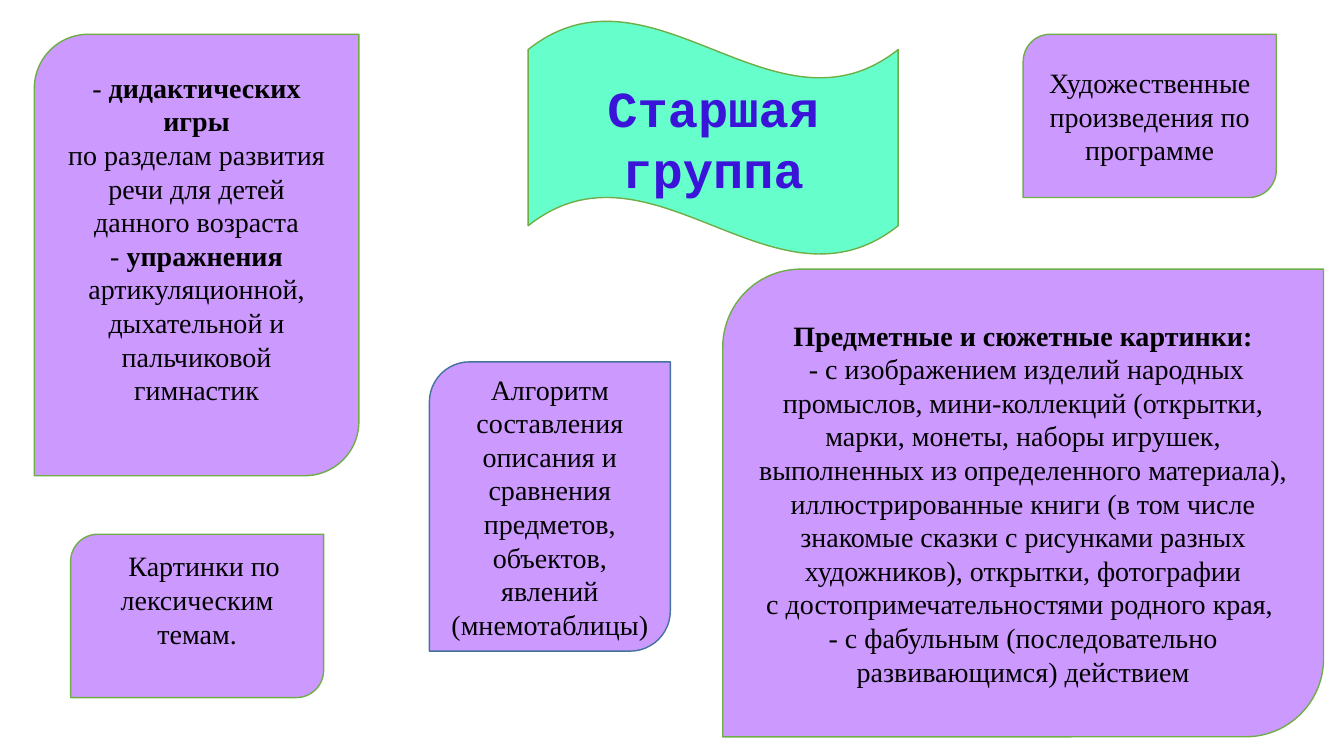
from pptx import Presentation
from pptx.dml.color import RGBColor
from pptx.enum.shapes import MSO_SHAPE
from pptx.enum.text import MSO_ANCHOR, PP_ALIGN
from pptx.util import Inches, Pt

CARD = MSO_SHAPE.ROUND_2_DIAG_RECTANGLE
WAVE = MSO_SHAPE.WAVE
MIDDLE = MSO_ANCHOR.MIDDLE
CENTER = PP_ALIGN.CENTER

LILAC = RGBColor(0xCC, 0x99, 0xFF)
MINT = RGBColor(0x66, 0xFF, 0xCC)
GREEN = RGBColor(0x70, 0xAD, 0x47)
BLUE = RGBColor(0x43, 0x73, 0x9E)
INDIGO = RGBColor(0x3A, 0x15, 0xD9)
BLACK = RGBColor(0, 0, 0)

SLIDE_W, SLIDE_H = Inches(13.333), Inches(7.5)
SMALL_CARD = (18.83, 21.6)
TOP_ROW = 4.53
LINE_GAP = Inches(0.38)

GAMES = [[
    ("- ", False), ("дидактических игры\n", True),
    ("по разделам развития речи для детей данного возраста\n- ", False),
    ("упражнения ", True),
    ("артикуляционной,\nдыхательной и\nпальчиковой гимнастик", False),
]]
PICTURES = [
    [("Предметные и сюжетные картинки:", True)],
    [(" - с изображением изделий народных промыслов, мини-коллекций "
      "(открытки, марки, монеты, наборы игрушек, выполненных из "
      "определенного материала), иллюстрированные книги (в том числе "
      "знакомые сказки с рисунками разных художников), открытки, "
      "фотографии", False)],
    [("с достопримечательностями родного края, ", False)],
    [("- с фабульным (последовательно развивающимся) действием", False)],
]
FICTION = [[("Художественные произведения по программе", False)]]
TOPICS = [[("Картинки по лексическим темам.", False)]]
ALGORITHM = [[("Алгоритм составления описания и сравнения предметов, "
               "объектов, явлений (мнемотаблицы)", False)]]
TITLE = [[("Старшая группа", True)]]


def add_figure(s, kind, left, top, width, height, fill, line):
    """Place a preset shape; lengths are percentages of the slide."""
    sp = s.shapes.add_shape(
        kind, int(SLIDE_W * left / 100), int(SLIDE_H * top / 100),
        int(SLIDE_W * width / 100), int(SLIDE_H * height / 100))
    sp.shadow.inherit = False
    sp.fill.solid()
    sp.fill.fore_color.rgb = fill
    sp.line.color.rgb = line
    sp.line.width = Pt(1)
    return sp


def add_runs(p, runs):
    """Add (text, bold) pairs; a newline becomes a line break."""
    for text, bold in runs:
        for i, part in enumerate(text.split("\n")):
            if i:
                p.add_line_break()
            if part:
                r = p.add_run()
                r.text = part
                r.font.bold = bold


def write(sp, paragraphs, font, size, color):
    tf = sp.text_frame
    tf.word_wrap = True
    tf.vertical_anchor = MIDDLE
    tf.margin_left = tf.margin_right = Inches(0.09)
    for i, runs in enumerate(paragraphs):
        p = tf.add_paragraph() if i else tf.paragraphs[0]
        p.alignment = CENTER
        add_runs(p, runs)
        p.font.name = font
        p.font.size = Pt(size)
        p.font.color.rgb = color
    return tf


def add_card(s, left, top, width, height, paragraphs, line=GREEN):
    sp = add_figure(s, CARD, left, top, width, height, LILAC, line)
    return write(sp, paragraphs, "Times New Roman", 20, BLACK)


def main():
    prs = Presentation()
    prs.slide_width, prs.slide_height = SLIDE_W, SLIDE_H
    s = prs.slides.add_slide(prs.slide_layouts[6])

    games = add_card(s, 2.55, TOP_ROW, 24.15, 58.4, GAMES)
    banner = add_figure(s, WAVE, 39.3, 2.67, 27.53, 31.07, MINT, GREEN)
    write(banner, TITLE, "Courier New", 36, INDIGO)
    add_card(s, 76.13, TOP_ROW, *SMALL_CARD, FICTION)
    add_card(s, 53.78, 35.6, 44.7, 61.87, PICTURES)
    topics = add_card(s, 5.25, 70.67, *SMALL_CARD, TOPICS)
    add_card(s, 31.95, 47.87, 17.93, 38.27, ALGORITHM, BLUE)

    for tf in (games, topics):
        tf.margin_bottom = LINE_GAP
    first_line = topics.paragraphs[0]._p.get_or_add_pPr()
    first_line.set("indent", str(Inches(0.14)))

    prs.save("out.pptx")


if __name__ == "__main__":
    main()
